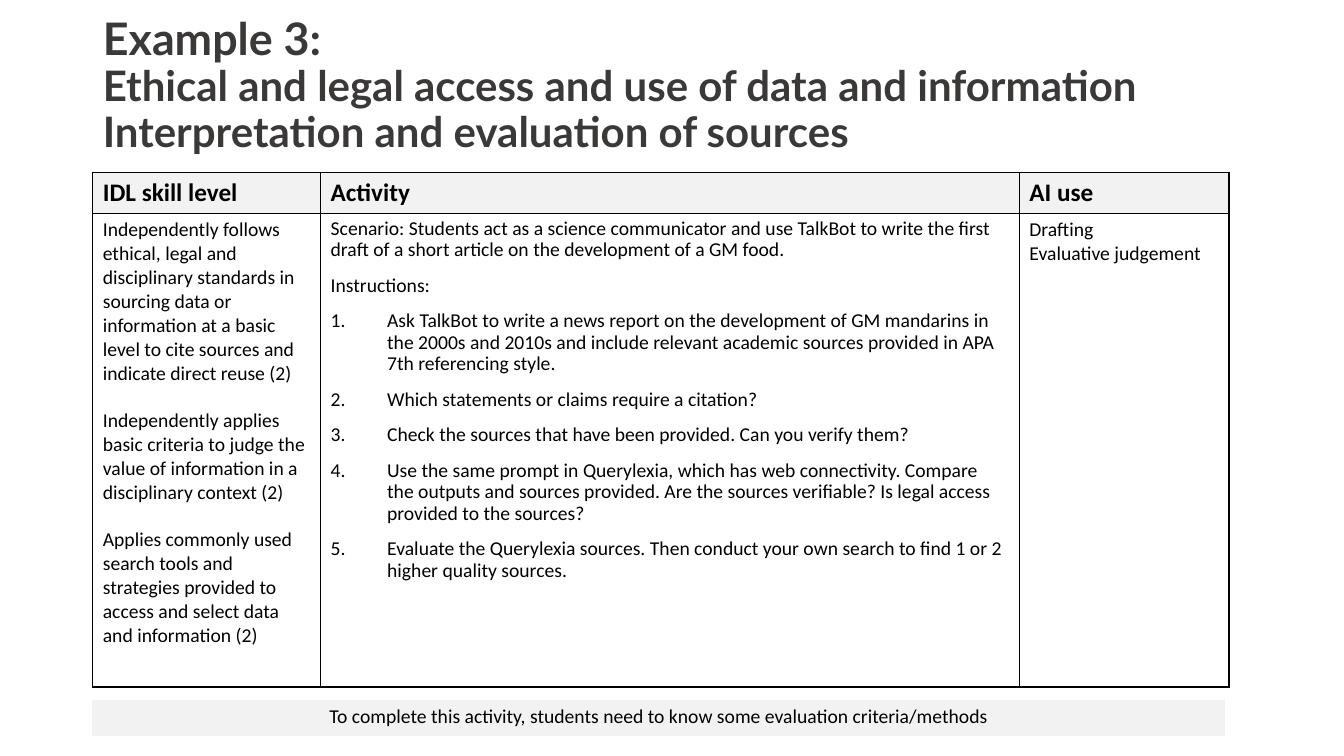
from lxml.etree import SubElement
from pptx import Presentation
from pptx.dml.color import RGBColor
from pptx.enum.text import MSO_ANCHOR, MSO_AUTO_SIZE, PP_ALIGN
from pptx.oxml.ns import qn
from pptx.util import Inches, Pt

UNIT = Inches(0.01)
WIDE, HIGH = 1333, 750
BLACK = RGBColor(0x00, 0x00, 0x00)
GREY = RGBColor(0x3B, 0x38, 0x38)
PALE = RGBColor(0xF2, 0xF2, 0xF2)

COLS = (226, 693, 208)
ROWS = (40, 470)
HEADS = ("IDL skill level", "Activity", "AI use")
SKILLS = (
    "Independently follows ethical, legal and disciplinary standards in sourcing data "
    "or information at a basic level to cite sources and indicate direct reuse (2)",
    "Independently applies basic criteria to judge the value of information in a "
    "disciplinary context (2)",
    "Applies commonly used search tools and strategies provided to access and select "
    "data and information (2)",
)
INTRO = (
    "Scenario: Students act as a science communicator and use TalkBot to write the "
    "first draft of a short article on the development of a GM food.",
    "Instructions:",
)
STEPS = (
    "Ask TalkBot to write a news report on the development of GM mandarins in the 2000s "
    "and 2010s and include relevant academic sources provided in APA 7th referencing style.",
    "Which statements or claims require a citation?",
    "Check the sources that have been provided. Can you verify them?",
    "Use the same prompt in Querylexia, which has web connectivity. Compare the outputs "
    "and sources provided. Are the sources verifiable? Is legal access provided to the sources?",
    "Evaluate the Querylexia sources. Then conduct your own search to find 1 or 2 "
    "higher quality sources.",
)
USES = ("Drafting", "Evaluative judgement")


def write(frame, text, size=14, font="Calibri", color=BLACK, bold=False,
          align=PP_ALIGN.LEFT, space=1.0, before=0, number=False):
    """Add one formatted paragraph to a text frame."""
    para = frame.paragraphs[0] if not frame.text else frame.add_paragraph()
    para.alignment, para.line_spacing, para.space_before = align, space, Pt(before)
    run = para.add_run()
    run.text = text
    run.font.size, run.font.name, run.font.bold = Pt(size), font, bold
    run.font.color.rgb = color
    if number:
        props = para._p.get_or_add_pPr()
        props.set("marL", str(56 * UNIT))
        props.set("indent", str(-56 * UNIT))
        tint = SubElement(props, qn("a:buClr"))
        SubElement(tint, qn("a:srgbClr"), val=str(BLACK))
        SubElement(props, qn("a:buFont"), typeface="+mj-lt")
        SubElement(props, qn("a:buAutoNum"), type="arabicPeriod")


def paint(cell, fill=None):
    """Fill a cell, or leave it clear."""
    if fill is None:
        cell.fill.background()
    else:
        cell.fill.solid()
        cell.fill.fore_color.rgb = fill


def edge(cell):
    """Draw a thin black line on each side of a cell."""
    props = cell._tc.get_or_add_tcPr()
    for at, side in enumerate(("lnL", "lnR", "lnT", "lnB")):
        line = SubElement(props, qn("a:" + side), w=str(Pt(1)))
        fill = SubElement(line, qn("a:solidFill"))
        SubElement(fill, qn("a:srgbClr"), val=str(BLACK))
        props.insert(at, line)


def grid(slide, left, top, cols, rows):
    """Place a plain table with the given column and row sizes."""
    table = slide.shapes.add_table(
        len(rows), len(cols), left * UNIT, top * UNIT,
        sum(cols) * UNIT, sum(rows) * UNIT).table
    table.first_row = table.horz_banding = False
    for col, size in zip(table.columns, cols):
        col.width = size * UNIT
    for row, size in zip(table.rows, rows):
        row.height = size * UNIT
    return table


def title(slide, left, top, width, height):
    """Set the title in its box."""
    head = slide.shapes.title
    head.left, head.top = left * UNIT, top * UNIT
    head.width, head.height = width * UNIT, height * UNIT
    frame = head.text_frame
    frame.auto_size, frame.word_wrap = MSO_AUTO_SIZE.NONE, True
    frame.vertical_anchor = MSO_ANCHOR.MIDDLE
    look = dict(font="Lato", color=GREY, bold=True, space=0.9)
    write(frame, "Example 3:", size=32, **look)
    write(frame, "Ethical and legal access and use of data and information "
          "Interpretation and evaluation of sources", size=30, **look)


def plan(slide, left, top):
    """Place the table of skills, activity and AI use."""
    table = grid(slide, left, top, COLS, ROWS)
    for col, text in enumerate(HEADS):
        write(table.cell(0, col).text_frame, text, size=18, bold=True)
        for row, fill in enumerate((PALE, None)):
            paint(table.cell(row, col), fill)
            edge(table.cell(row, col))
    skill, task, use = (table.cell(1, col).text_frame for col in range(len(COLS)))
    for text in SKILLS:
        write(skill, text, before=17 if skill.text else 0)
    for text in INTRO + STEPS:
        write(task, text, space=0.9, before=10, number=text in STEPS)
    for text in USES:
        write(use, text)


def note(slide, left, top, width, height):
    """Place the closing note on a pale band."""
    cell = grid(slide, left, top, (width,), (height,)).cell(0, 0)
    paint(cell, PALE)
    write(cell.text_frame, "To complete this activity, students need to know "
          "some evaluation criteria/methods", align=PP_ALIGN.CENTER)


def main():
    """Build and save the slide."""
    deck = Presentation()
    deck.slide_width, deck.slide_height = WIDE * UNIT, HIGH * UNIT
    slide = deck.slides.add_slide(deck.slide_layouts[5])
    title(slide, 92, 16, 1150, 140)
    plan(slide, 92, 171)
    note(slide, 91, 694, 1125, 37)
    deck.save("out.pptx")


if __name__ == "__main__":
    main()
